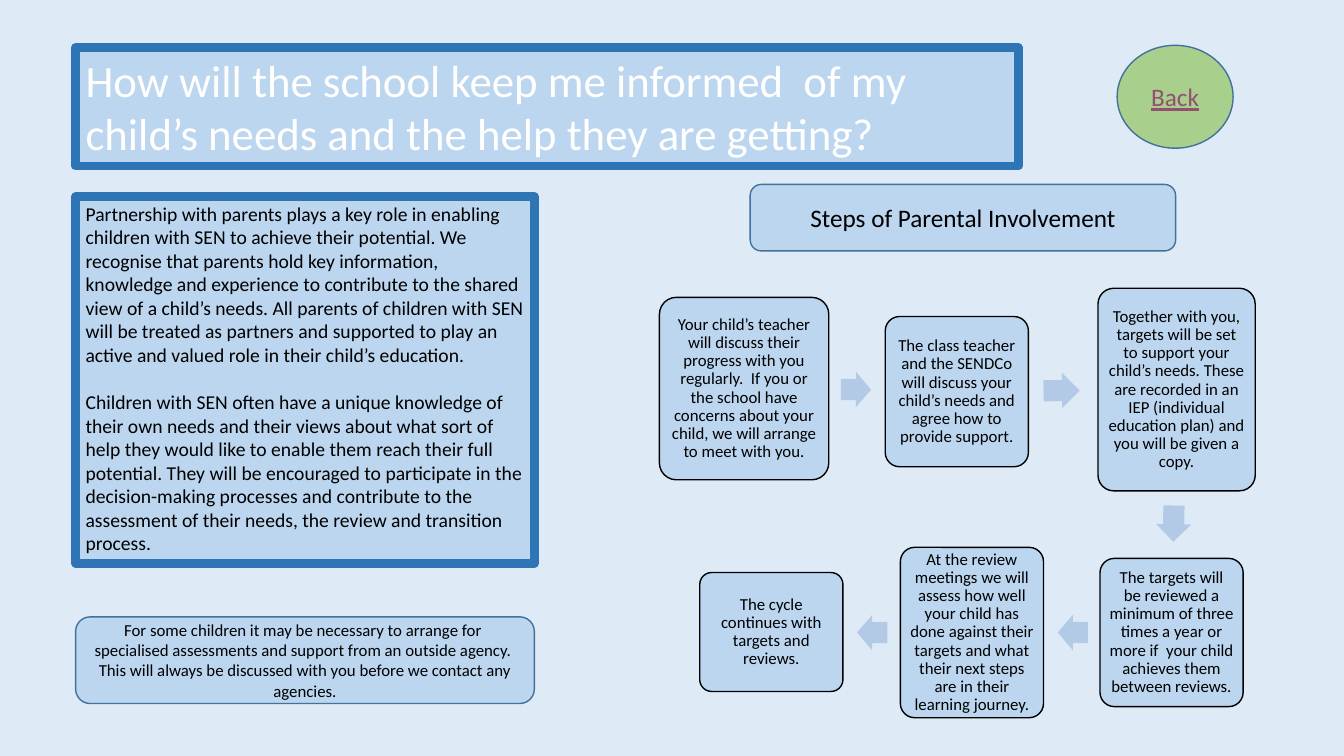
from dataclasses import dataclass

from pptx import Presentation
from pptx.dml.color import RGBColor
from pptx.enum.shapes import MSO_SHAPE
from pptx.enum.text import MSO_ANCHOR, PP_ALIGN
from pptx.util import Inches, Pt


@dataclass(frozen=True)
class Theme:
    """Colours, font and type sizes of the slide."""
    font: str = "Calibri"
    back: str = "DEEBF7"
    panel: str = "BBD6EE"
    frame: str = "2E75B5"
    edge: str = "42719B"
    green: str = "A8D08C"
    arrow: str = "B3CAE7"
    link: str = "954F72"
    black: str = "000000"
    white: str = "FFFFFF"
    title: int = 32
    head: int = 18
    body: int = 14
    small: int = 12


class Board:
    """Draws styled elements on one slide."""

    def __init__(self, deck, theme):
        self.theme = theme
        self.slide = deck.slides.add_slide(deck.slide_layouts[6])
        fill = self.slide.background.fill
        fill.solid()
        fill.fore_color.rgb = RGBColor.from_string(theme.back)

    def shape(self, kind, box, fill, line=None, width=1):
        """Add a filled shape, with an outline if a line colour is given."""
        item = self.slide.shapes.add_shape(kind, *map(Inches, box))
        item.shadow.inherit = False
        item.fill.solid()
        item.fill.fore_color.rgb = RGBColor.from_string(fill)
        if line:
            item.line.color.rgb = RGBColor.from_string(line)
            item.line.width = Pt(width)
        else:
            item.line.fill.background()
        return item

    def label_text(self, item, text, size, color, align=PP_ALIGN.CENTER,
                   anchor=MSO_ANCHOR.MIDDLE, pad=0.1, pitch=None, gap=0):
        """Set the text of a shape, one paragraph a line."""
        frame = item.text_frame
        frame.text = text
        frame.word_wrap = True
        frame.vertical_anchor = anchor
        frame.margin_left = frame.margin_right = Inches(pad)
        frame.margin_top = frame.margin_bottom = Inches(0.05)
        for index, para in enumerate(frame.paragraphs):
            para.alignment = align
            para.line_spacing = pitch
            para.space_before = Pt(gap if index else 0)
            for run in para.runs:
                run.font.name = self.theme.font
                run.font.size = Pt(size)
                run.font.color.rgb = RGBColor.from_string(color)

    def panel(self, box, text, size, color, gap=0):
        """Add a thick framed panel with text from its top left."""
        item = self.shape(MSO_SHAPE.RECTANGLE, box, self.theme.panel, self.theme.frame, 6)
        self.label_text(item, text, size, color, PP_ALIGN.LEFT, MSO_ANCHOR.TOP, gap=gap)

    def label(self, box, text, size):
        """Add a rounded label with centred text."""
        item = self.shape(MSO_SHAPE.ROUNDED_RECTANGLE, box, self.theme.panel, self.theme.edge)
        self.label_text(item, text, size, self.theme.black)

    def step(self, box, text):
        """Add one step of the flow."""
        item = self.shape(MSO_SHAPE.ROUNDED_RECTANGLE, box, self.theme.panel, self.theme.black)
        item.adjustments[0] = 0.1
        self.label_text(item, text, self.theme.small, self.theme.black, pad=0.05, pitch=0.9)

    def arrow(self, left, top, width, turn):
        """Add a block arrow turned by some degrees."""
        item = self.shape(MSO_SHAPE.RIGHT_ARROW, (left, top, width, 0.35), self.theme.arrow)
        item.adjustments[0] = 0.6
        item.rotation = turn

    def button(self, box, text):
        """Add a round button with underlined text."""
        item = self.shape(MSO_SHAPE.OVAL, box, self.theme.green, self.theme.edge)
        self.label_text(item, text, self.theme.head, self.theme.link)
        item.text_frame.paragraphs[0].runs[0].font.underline = True


TITLE = "How will the school keep me informed  of my child’s needs and the help they are getting?"
PARTNERS = (
    "Partnership with parents plays a key role in enabling children with SEN to achieve "
    "their potential. We recognise that parents hold key information,  knowledge and "
    "experience to contribute to the shared view of a child’s needs. All parents of "
    "children with SEN will be treated as partners and supported to play an active and "
    "valued role in their child’s education.\n"
    "Children with SEN often have a unique knowledge of their own needs and their views "
    "about what sort of help they would like to enable them reach their full potential. "
    "They will be encouraged to participate in the decision-making processes and "
    "contribute to the assessment of their needs, the review and transition process."
)
AGENCY = (
    "For some children it may be necessary to arrange for  specialised assessments and "
    "support from an outside agency.  This will always be discussed with you before we "
    "contact any agencies."
)
STEPS = [
    ((6.54, 2.95, 1.68, 1.81),
     "Your child’s teacher will discuss their progress with you regularly.  If you or "
     "the school have concerns about your child, we will arrange to meet with you."),
    ((8.78, 3.14, 1.42, 1.49),
     "The class teacher and the SENDCo will discuss your child’s needs and agree how to "
     "provide support."),
    ((10.89, 2.86, 1.56, 2.01),
     "Together with you, targets will be set to support your child’s needs. These are "
     "recorded in an IEP (individual education plan) and you will be given a copy."),
    ((10.91, 5.54, 1.42, 1.47),
     "The targets will be reviewed a minimum of three times a year or more if  your "
     "child achieves them between reviews."),
    ((8.93, 5.43, 1.42, 1.69),
     "At the review meetings we will assess how well your child has done against their "
     "targets and what their next steps are in their learning journey."),
    ((6.94, 5.68, 1.42, 1.18),
     "The cycle continues with targets and reviews."),
]
ARROWS = [
    (8.34, 3.69, 0.3, 0.6),
    (10.35, 3.7, 0.36, 359.5),
    (11.46, 5.02, 0.36, 91.1),
    (10.49, 6.1, 0.3, 180),
    (8.5, 6.1, 0.3, 180),
]


def main():
    """Build the slide and save it."""
    deck = Presentation()
    deck.slide_width, deck.slide_height = Inches(13.33), Inches(7.5)
    theme = Theme()
    board = Board(deck, theme)
    board.panel((0.75, 0.47, 9.35, 1.18), TITLE, theme.title, theme.white)
    board.button((11.08, 0.45, 1.15, 1.02), "Back")
    board.panel((0.75, 1.95, 4.55, 3.64), PARTNERS, theme.body, theme.black, gap=17)
    for box, text in STEPS:
        board.step(box, text)
    for place in ARROWS:
        board.arrow(*place)
    board.label((7.44, 1.83, 4.22, 0.66), "Steps of Parental Involvement", theme.head)
    board.label((0.75, 6.12, 4.55, 0.86), AGENCY, theme.small)
    deck.save("out.pptx")


if __name__ == "__main__":
    main()
